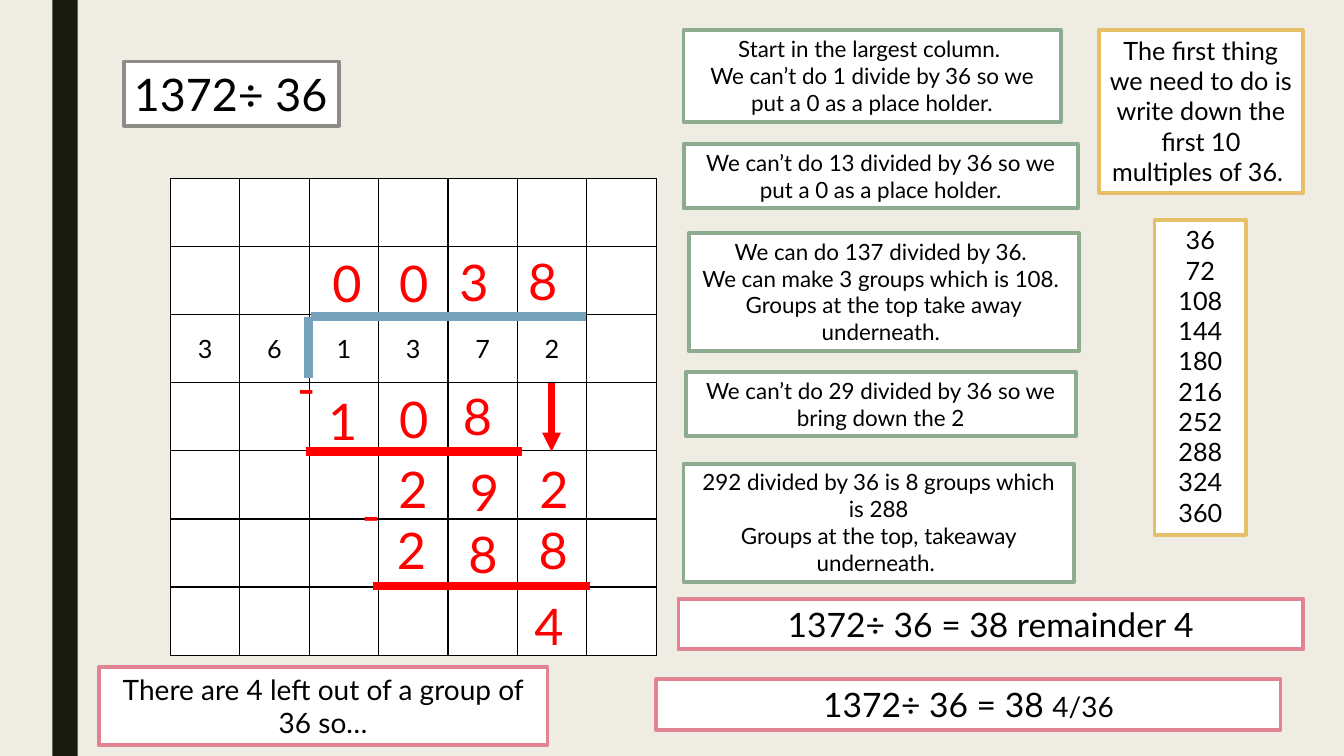
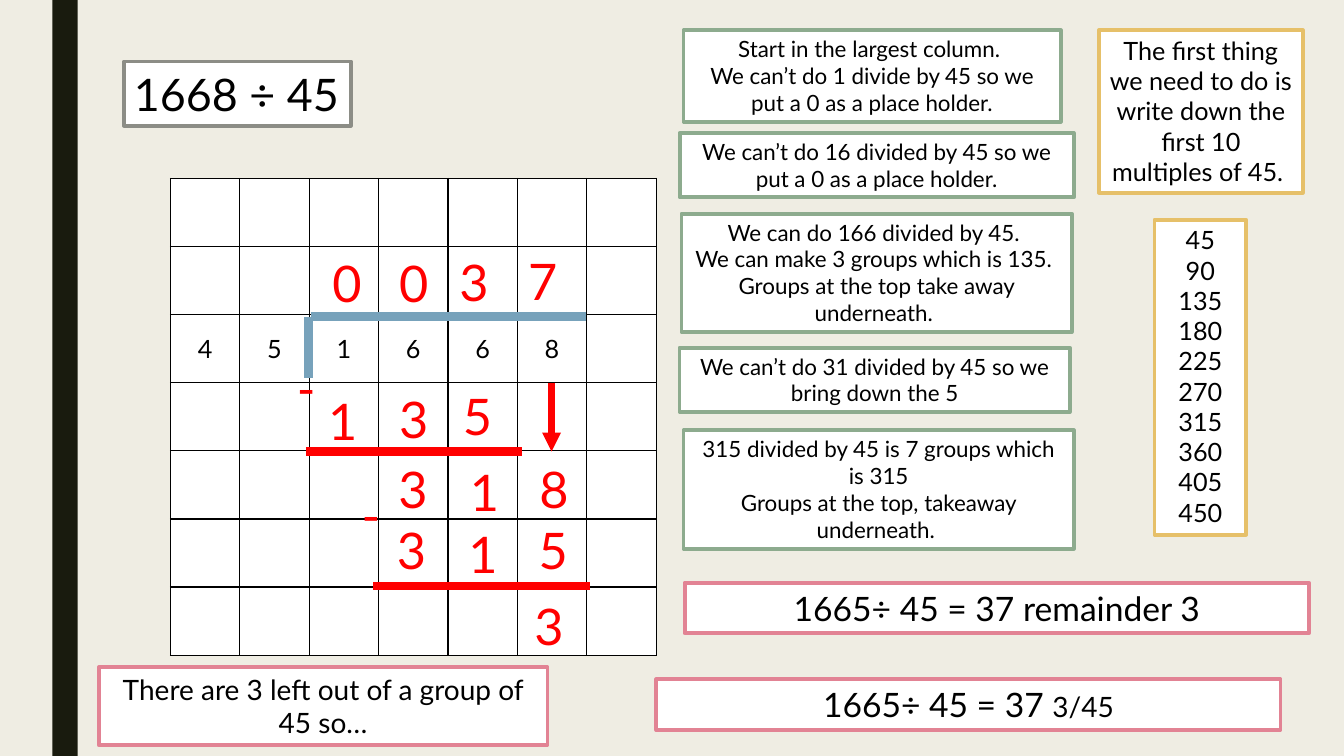
from dataclasses import dataclass

from lxml.etree import SubElement
from pptx import Presentation
from pptx.dml.color import RGBColor
from pptx.enum.shapes import MSO_CONNECTOR as Connector, MSO_SHAPE as Preset
from pptx.enum.text import MSO_ANCHOR as Anchor, MSO_AUTO_SIZE as AutoSize, PP_ALIGN as Align
from pptx.oxml.ns import qn
from pptx.util import Inches, Pt


@dataclass(frozen=True)
class Theme:
    font: str = "Lato"
    paper: str = "EFEDE3"
    band: str = "191B0E"
    white: str = "FFFFFF"
    ink: str = "000000"
    working: str = "FF0000"
    bracket: str = "77A2BB"
    question: str = "8C8D86"
    multiples: str = "E6C069"
    step: str = "8DAB8E"
    answer: str = "E28394"
    question_size: int = 32
    digit_size: int = 36
    answer_size: int = 24
    leftover_size: int = 20
    body_size: int = 18
    step_size: int = 16
    outline: float = 2.75
    rule: float = 6
    arrow: float = 4.5
    leading: float = 1.21


THEME = Theme()

# Each step spot is left, top, width in inches.
PROBLEMS = [
    dict(
        question="1372÷ 36", question_width=2.13, sum="1372÷ 36", divisor=36,
        dividend="1372", quotient="0038", first_two="13", first_three="137",
        first_product="108", difference="29", brought_down="2", bring_text="2",
        last="292", last_product="288", remainder="4",
        step_spots=[(6.78, 0.3, 3.74), (6.78, 1.43, 3.91), (6.83, 2.31, 3.87),
                    (6.8, 3.69, 3.87), (6.78, 4.6, 3.87)],
        answer_spot=(6.73, 5.94, 6.19),
    ),
    dict(
        question="1668 ÷ 45", question_width=2.25, sum="1665÷ 45", divisor=45,
        dividend="1668", quotient="0037", first_two="16", first_three="166",
        first_product="135", difference="31", brought_down="8", bring_text="5",
        last="315", last_product="315", remainder="3",
        step_spots=[(6.78, 0.3, 3.74), (6.74, 1.32, 3.91), (6.76, 2.12, 3.87),
                    (6.74, 3.45, 3.87), (6.78, 4.27, 3.87)],
        answer_spot=(6.79, 5.78, 6.19),
    ),
]

# Paragraphs of each step, and the number of lines they fill.
STEPS = [
    (["Start in the largest column. ",
      "We can’t do 1 divide by {divisor} so we put a 0 as a place holder."], 3),
    (["We can’t do {first_two} divided by {divisor} so we put a 0 as a place holder."], 2),
    (["We can do {first_three} divided by {divisor}. ",
      "We can make {quotient[2]} groups which is {first_product}. ",
      "Groups at the top take away underneath. "], 4),
    (["We can’t do {difference} divided by {divisor} so we bring down the {bring_text}"], 2),
    (["{last} divided by {divisor} is {quotient[3]} groups which is {last_product}",
      "Groups at the top, takeaway underneath. "], 4),
]
MULTIPLES_INTRO = ("The first thing we need to do is write down the first 10 "
                   "multiples of {divisor}. ")
LEFTOVER = "There are {remainder} left out of a group of {divisor} so…"
WHOLE_ANSWER = "{sum} = {whole} remainder {remainder}"

# The squared paper: places below are in columns and rows of it.
GRID_LEFT, GRID_TOP, GRID_COUNT = 1.69, 1.77, 7
GRID_WIDTH, GRID_HEIGHT = 4.82, 4.73
DIVIDEND_ROW = 2
DIGIT_BOX = 0.71

DIGIT_PLACES = {
    "quotient": [(2.19, 1.01), (3.15, 1.01), (4.02, 0.99), (5.01, 0.98)],
    "first_product": [(2.13, 3.03), (3.15, 3.0), (4.07, 2.96)],
    "difference": [(3.14, 4.03), (4.17, 4.08)],
    "brought_down": [(5.17, 4.03)],
    "last_product": [(3.12, 4.93), (4.15, 4.99), (5.16, 4.93)],
    "remainder": [(5.1, 6.05)],
}
MINUS_PLACES = [(1.68, 2.55), (2.61, 4.42)]
RULES = [
    ((1.99, 2.93), (1.99, 2.03), THEME.bracket),
    ((2.02, 2.03), (5.98, 2.03), THEME.bracket),
    ((1.95, 4.01), (5.07, 4.01), THEME.working),
    ((2.92, 5.98), (6.04, 5.98), THEME.working),
]
BRING_DOWN = ((5.49, 3.0), (5.49, 4.01))


def rgb(colour):
    return RGBColor.from_string(colour)


def paint(fill, colour):
    fill.solid()
    fill.fore_color.rgb = rgb(colour)


def on_grid(place):
    column, row = place
    return (GRID_LEFT + column * GRID_WIDTH / GRID_COUNT,
            GRID_TOP + row * GRID_HEIGHT / GRID_COUNT)


def write(paragraph, text, size, colour=THEME.ink):
    run = paragraph.add_run()
    run.text = text
    for name, value in dict(name=THEME.font, size=Pt(size)).items():
        setattr(run.font, name, value)
    run.font.color.rgb = rgb(colour)


def add_text(slide, spot, paragraphs, size, lines=1, border=None,
             colour=THEME.ink, align=Align.CENTER, wrap=True):
    """Place a box as tall as its lines of text; return its last paragraph."""
    left, top, width = spot
    height = 0.1 + lines * size * THEME.leading / 72
    box = slide.shapes.add_textbox(*map(Inches, (left, top, width, height)))
    if border:
        paint(box.fill, THEME.white)
        box.line.color.rgb = rgb(border)
        box.line.width = Pt(THEME.outline)
    frame = box.text_frame
    frame.word_wrap = wrap
    frame.auto_size = AutoSize.SHAPE_TO_FIT_TEXT
    for index, text in enumerate(paragraphs):
        paragraph = frame.add_paragraph() if index else frame.paragraphs[0]
        paragraph.alignment = align
        write(paragraph, text, size, colour)
    return paragraph


def add_rule(slide, start, end, colour, width, arrow=False):
    ends = map(Inches, on_grid(start) + on_grid(end))
    rule = slide.shapes.add_connector(Connector.STRAIGHT, *ends)
    rule.line.color.rgb = rgb(colour)
    rule.line.width = Pt(width)
    properties = rule.element.spPr
    if arrow:
        SubElement(properties.find(qn("a:ln")), qn("a:tailEnd"), type="triangle")
    SubElement(properties, qn("a:effectLst"))


def border_cell(cell):
    properties = cell._tc.get_or_add_tcPr()
    for index, side in enumerate(("lnL", "lnR", "lnT", "lnB")):
        edge = SubElement(properties, qn(f"a:{side}"), w=str(Pt(1)))
        solid = SubElement(edge, qn("a:solidFill"))
        SubElement(solid, qn("a:srgbClr"), val=THEME.ink)
        properties.insert(index, edge)


def add_squared_paper(slide, problem):
    area = map(Inches, (GRID_LEFT, GRID_TOP, GRID_WIDTH, GRID_HEIGHT))
    table = slide.shapes.add_table(GRID_COUNT, GRID_COUNT, *area).table
    table.first_row = table.horz_banding = False
    for cell in table.iter_cells():
        paint(cell.fill, THEME.white)
        border_cell(cell)
    for column, digit in enumerate(f"{problem['divisor']}{problem['dividend']}"):
        cell = table.cell(DIVIDEND_ROW, column)
        cell.vertical_anchor = Anchor.MIDDLE
        paragraph = cell.text_frame.paragraphs[0]
        paragraph.alignment = Align.CENTER
        write(paragraph, digit, THEME.body_size)


def add_working(slide, problem):
    for start, end, colour in RULES:
        add_rule(slide, start, end, colour, THEME.rule)
    add_rule(slide, *BRING_DOWN, THEME.working, THEME.arrow, arrow=True)
    digits = [pair for part, places in DIGIT_PLACES.items()
              for pair in zip(problem[part], places)]
    for digit, place in digits + [("-", place) for place in MINUS_PLACES]:
        add_text(slide, (*on_grid(place), DIGIT_BOX), [digit], THEME.digit_size,
                 colour=THEME.working, align=Align.LEFT)


def add_explanations(slide, problem):
    for (paragraphs, lines), spot in zip(STEPS, problem["step_spots"]):
        # Indexed digits such as quotient[2] are resolved by format.
        add_text(slide, spot, [text.format(**problem) for text in paragraphs],
                 THEME.step_size, lines, THEME.step)
    add_text(slide, (10.9, 0.3, 2.02), [MULTIPLES_INTRO.format(**problem)],
             THEME.body_size, 5, THEME.multiples)
    multiples = [str(problem["divisor"] * count) for count in range(1, 11)]
    add_text(slide, (11.45, 2.18, 0.91), multiples, THEME.body_size,
             len(multiples), THEME.multiples)


def add_answers(slide, problem):
    whole = int(problem["quotient"])
    add_text(slide, problem["answer_spot"], [WHOLE_ANSWER.format(whole=whole, **problem)],
             THEME.answer_size, border=THEME.answer)
    add_text(slide, (0.98, 6.62, 4.45), [LEFTOVER.format(**problem)],
             THEME.leftover_size, 2, THEME.answer)
    fraction = add_text(slide, (6.51, 6.74, 6.19), [f"{problem['sum']} = {whole} "],
                        THEME.answer_size, border=THEME.answer)
    write(fraction, f"{problem['remainder']}/{problem['divisor']}", THEME.leftover_size)


def dress_master(prs, slide):
    """Put the paper colour and the side band on the master, for all slides."""
    master = prs.slide_master
    paint(master.background.fill, THEME.paper)
    band = slide.shapes.add_shape(Preset.RECTANGLE, Inches(0.52), 0,
                                  Inches(0.25), prs.slide_height)
    band.shadow.inherit = False
    paint(band.fill, THEME.band)
    band.line.fill.background()
    band.element.nvSpPr.cNvPr.set("id", "100")
    master.shapes.element.append(band.element)


def main():
    prs = Presentation()
    prs.slide_width, prs.slide_height = Inches(13.33), Inches(7.5)
    blank = prs.slide_layouts[6]
    for index, problem in enumerate(PROBLEMS):
        slide = prs.slides.add_slide(blank)
        if index == 0:
            dress_master(prs, slide)
        add_text(slide, (1.23, 0.61, problem["question_width"]), [problem["question"]],
                 THEME.question_size, border=THEME.question, align=Align.LEFT, wrap=False)
        add_squared_paper(slide, problem)
        add_working(slide, problem)
        add_explanations(slide, problem)
        add_answers(slide, problem)
    prs.save("out.pptx")


if __name__ == "__main__":
    main()
